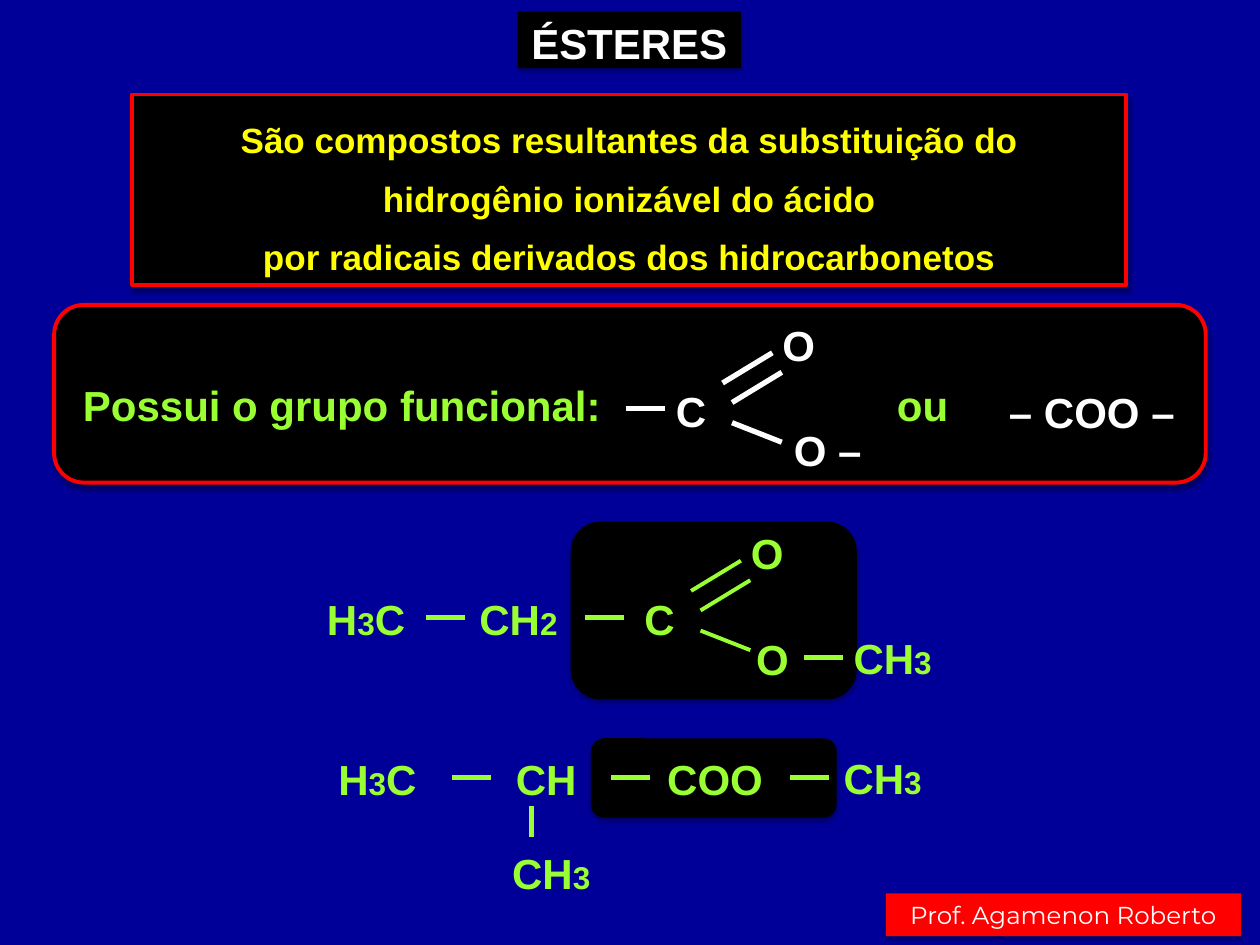
from itertools import groupby
from lxml import etree
from pptx import Presentation
from pptx.dml.color import RGBColor
from pptx.enum.shapes import MSO_CONNECTOR, MSO_SHAPE
from pptx.enum.text import MSO_ANCHOR, MSO_AUTO_SIZE, PP_ALIGN
from pptx.oxml import parse_xml
from pptx.oxml.ns import qn
from pptx.util import Inches, Pt

RECTANGLE = MSO_SHAPE.RECTANGLE
ROUNDED = MSO_SHAPE.ROUNDED_RECTANGLE
STRAIGHT = MSO_CONNECTOR.STRAIGHT
CENTER, JUSTIFY = PP_ALIGN.CENTER, PP_ALIGN.JUSTIFY
TOP, MIDDLE = MSO_ANCHOR.TOP, MSO_ANCHOR.MIDDLE
GROW = MSO_AUTO_SIZE.SHAPE_TO_FIT_TEXT

COLORS = {
    "navy": "000099",
    "black": "000000",
    "red": "FF0000",
    "white": "FFFFFF",
    "yellow": "FFFF00",
    "green": "99FF33",
}
SLIDE_WIDTH, SLIDE_HEIGHT = Inches(10), Inches(7.5)
COLUMN, ROW = SLIDE_WIDTH / 100, SLIDE_HEIGHT / 75
TEXT_ROWS = 5.1
BOND_COLUMNS = 3.1
SHADOW = (
    '<a:effectLst xmlns:a="http://schemas.openxmlformats.org/drawingml/2006/main">'
    '<a:outerShdw blurRad="39370" dist="22860" dir="5400000" rotWithShape="0">'
    '<a:srgbClr val="000000"><a:alpha val="35000"/></a:srgbClr>'
    '</a:outerShdw></a:effectLst>'
)


def color(name):
    return RGBColor.from_string(COLORS[name])


def place(box):
    left, top, width, height = box
    return round(left * COLUMN), round(top * ROW), round(width * COLUMN), round(height * ROW)


def write(shape, lines, ink, size=24, font="Arial", bold=True, align=CENTER,
          anchor=TOP, wrap=False, spacing=None):
    frame = shape.text_frame
    frame.word_wrap = wrap
    frame.auto_size = GROW
    frame.vertical_anchor = anchor
    for index, line in enumerate(lines):
        paragraph = frame.add_paragraph() if index else frame.paragraphs[0]
        paragraph.alignment = align
        paragraph.line_spacing = spacing
        paragraph.font.name = font
        paragraph.font.size = Pt(size)
        paragraph.font.bold = bold
        paragraph.font.color.rgb = color(ink)
        for is_subscript, letters in groupby(line, str.isdigit):
            run = paragraph.add_run()
            run.text = "".join(letters)
            if is_subscript:
                run.font.size = Pt(size * 0.75)


def add_panel(slide, box, kind=RECTANGLE, fill="black", outline=None):
    shape = slide.shapes.add_shape(kind, *place(box))
    shape.fill.solid()
    shape.fill.fore_color.rgb = color(fill)
    if outline:
        shape.line.color.rgb = color(outline)
        shape.line.width = Pt(2.25)
    else:
        shape.line.fill.background()
    shape._element.spPr.append(parse_xml(SHADOW))
    return shape


def add_label(slide, text, left, top, width, ink="green", **style):
    label = slide.shapes.add_textbox(*place((left, top, width, TEXT_ROWS)))
    write(label, [text], ink, **style)


def add_bond(slide, start, end, ink="green", weight=3):
    x1, y1, x2, y2 = place((*start, *end))
    bond = slide.shapes.add_connector(STRAIGHT, x1, y1, x2, y2)
    bond.line.color.rgb = color(ink)
    bond.line.width = Pt(weight)
    etree.SubElement(bond._element.spPr, qn("a:effectLst"))


def add_flat_bonds(slide, starts, top, ink="green"):
    for left in starts:
        add_bond(slide, (left, top), (left + BOND_COLUMNS, top), ink)


def add_carbonyl(slide, left, top, ink, weight):
    add_label(slide, "C", left, top, 4.5, ink)
    add_label(slide, "O", left + 8.5, top - 5.25, 4.6, ink)
    for x, y, rise in ((5.5, 1.85, -2.4), (4.75, 0.3, -2.4), (5.5, 3.45, 1.55)):
        start = (left + x, top + y)
        add_bond(slide, start, (start[0] + 3.95, start[1] + rise), ink, weight)


def add_heading(slide, box):
    title = add_panel(slide, box)
    title.text_frame.margin_bottom = 0
    write(title, ["ÉSTERES"], "white", anchor=MIDDLE)


def add_definition(slide, box):
    panel = add_panel(slide, box, outline="red")
    write(panel, [
        "São compostos resultantes da substituição do",
        "hidrogênio ionizável do ácido",
        " por radicais derivados dos hidrocarbonetos ",
    ], "yellow", size=20, anchor=MIDDLE, wrap=True, spacing=1.4)


def add_functional_group(slide, box):
    left, top, _, _ = box
    add_panel(slide, box, ROUNDED, outline="red")
    for text, x, y, width, ink in (
        ("Possui o grupo funcional:", 1.3, 5.4, 43.5, "green"),
        ("ou", 65.9, 5.4, 6.1, "green"),
        ("– COO –", 74.8, 5.9, 15.3, "white"),
    ):
        add_label(slide, text, left + x, top + y, width, ink, align=JUSTIFY, anchor=MIDDLE)
    add_carbonyl(slide, left + 48.3, top + 5.9, "white", 3)
    add_label(slide, "O –", left + 57.7, top + 9, 7.4, "white")
    add_flat_bonds(slide, [left + 45.4], top + 8.2, "white")


def add_propanoate(slide, box):
    left, top, _, _ = box
    add_panel(slide, box, ROUNDED)
    for text, x, y, width in (
        ("H3C", -20.4, 5.2, 8.3),
        ("CH2", -8.3, 5.2, 8.3),
        ("O", 13.7, 8.4, 4.6),
        ("CH3", 21.4, 8.3, 8.3),
    ):
        add_label(slide, text, left + x, top + y, width)
    add_carbonyl(slide, left + 4.8, top + 5.2, "green", 2.25)
    add_flat_bonds(slide, [left - 11.5, left + 1.1], top + 7.6)
    add_flat_bonds(slide, [left + 18.5], top + 10.8)


def add_isobutanoate(slide, box):
    left, top, _, _ = box
    add_panel(slide, box, ROUNDED)
    for text, x, y, width in (
        ("H3C", -21.1, 0.7, 8.3),
        ("CH", -7.1, 0.7, 7.1),
        ("COO", 5, 0.7, 9.7),
        ("CH3", 19, 0.6, 8.3),
        ("CH3", -7.3, 8.2, 8.3),
    ):
        add_label(slide, text, left + x, top + y, width)
    add_flat_bonds(slide, [left - 11, left + 1.6, left + 15.8], top + 3.1)
    add_bond(slide, (left - 4.7, top + 5.4), (left - 4.7, top + 7.8))


def add_credit(slide, box):
    panel = add_panel(slide, box, fill="red")
    write(panel, ["Prof. Agamenon Roberto"], "white", size=14, font="Montserrat", bold=False)


def main():
    presentation = Presentation()
    presentation.slide_width, presentation.slide_height = SLIDE_WIDTH, SLIDE_HEIGHT
    slide = presentation.slides.add_slide(presentation.slide_layouts[6])
    slide.background.fill.solid()
    slide.background.fill.fore_color.rgb = color("navy")
    add_heading(slide, (41.1, 0.9, 17.7, 4.5))
    add_definition(slide, (10.5, 7.5, 78.9, 15.1))
    add_functional_group(slide, (4.3, 24.2, 91.4, 14.1))
    add_propanoate(slide, (45.3, 41.4, 22.7, 14.1))
    add_isobutanoate(slide, (46.9, 58.6, 19.5, 6.3))
    add_credit(slide, (70.3, 70.9, 28.2, 3.4))
    presentation.save("out.pptx")


if __name__ == "__main__":
    main()
